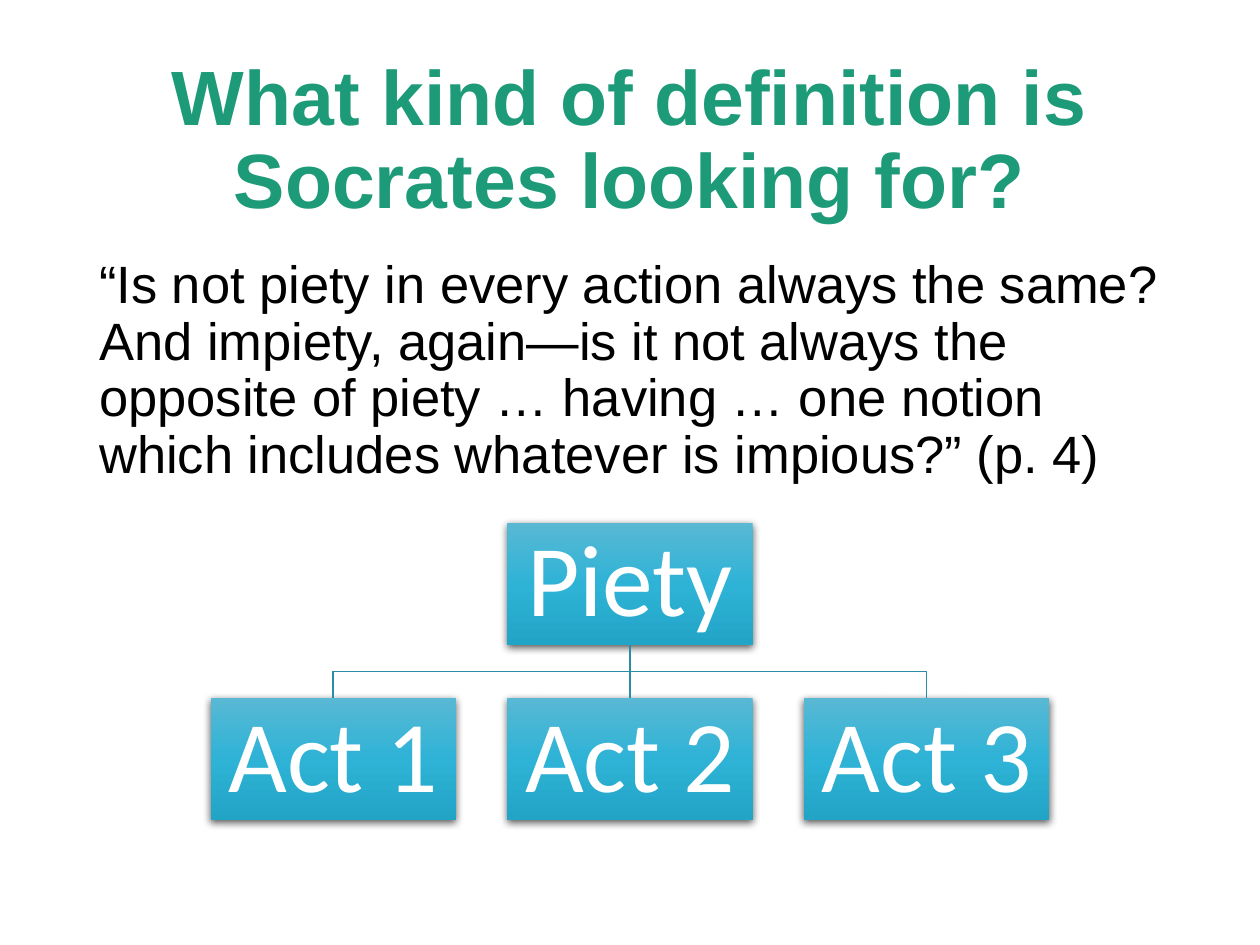
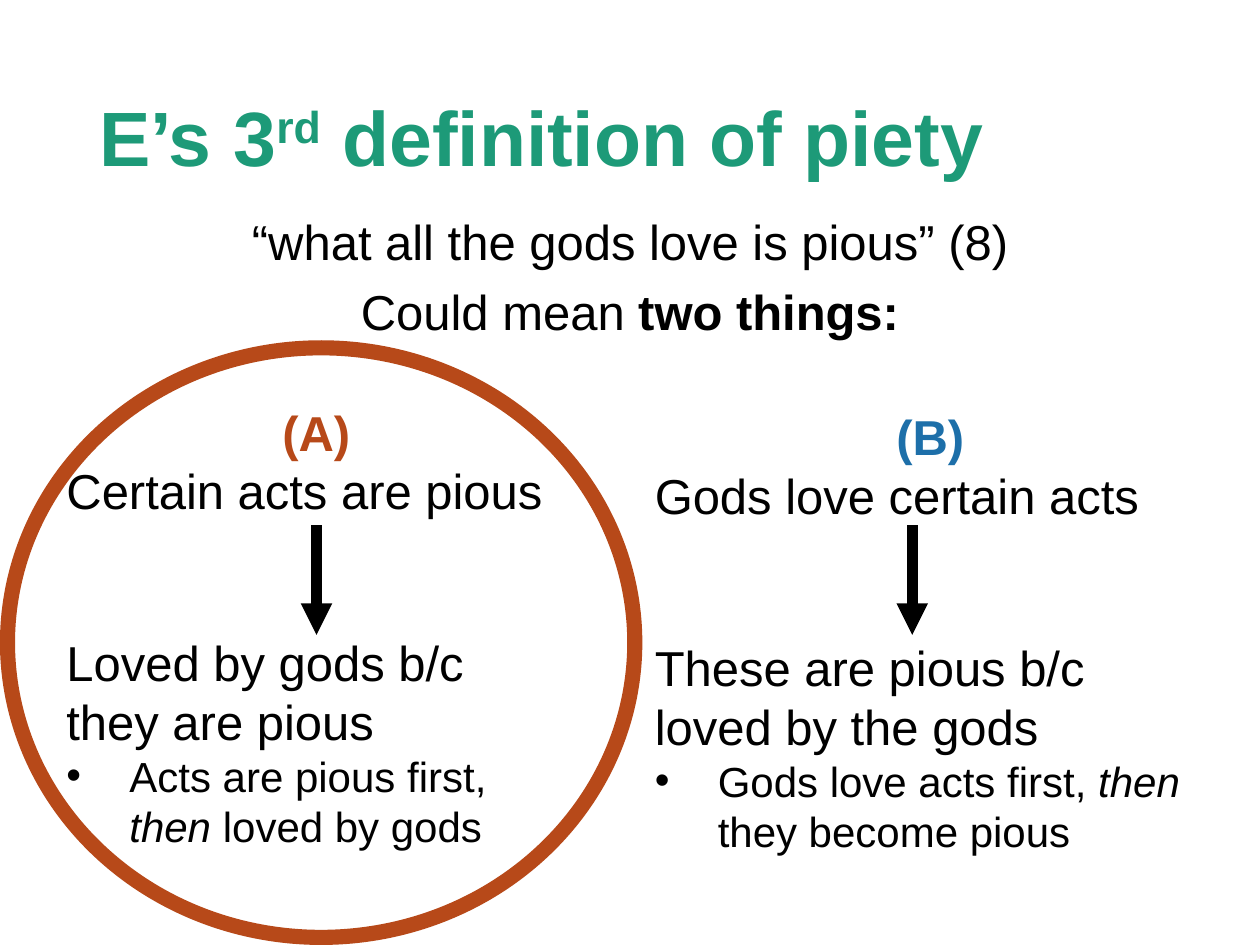
from lxml import etree
from pptx import Presentation
from pptx.dml.color import RGBColor
from pptx.enum.shapes import MSO_CONNECTOR, MSO_SHAPE
from pptx.enum.text import MSO_ANCHOR, PP_ALIGN
from pptx.oxml.ns import qn
from pptx.util import Cm, Pt

LEFT, CENTER = PP_ALIGN.LEFT, PP_ALIGN.CENTER
TOP, MIDDLE = MSO_ANCHOR.TOP, MSO_ANCHOR.MIDDLE
STRAIGHT = MSO_CONNECTOR.STRAIGHT
RECTANGLE, DONUT = MSO_SHAPE.RECTANGLE, MSO_SHAPE.DONUT

COLORS = {
    "title": "1D9A78",
    "text": "000000",
    "white": "FFFFFF",
    "option_a": "B74919",
    "option_b": "1D6FA9",
    "tree_line": "2B8CA5",
    "box_top": "59B8D4",
    "box_middle": "2EB3D6",
    "box_bottom": "21A4C6",
}
RGB = {name: RGBColor.from_string(value) for name, value in COLORS.items()}
MARGIN, CONTENT_WIDTH = 1.75, 21.9


def add_text(page, area, paragraphs, anchor=TOP, line_spacing=1.0):
    """Add a text box; area is left, top, width, height in cm.

    A paragraph is a dict with spans (text, style), size, and optional color,
    align, before and bullet. Styles: b bold, i italic, s superscript.
    """
    box = page.shapes.add_textbox(*[Cm(length) for length in area])
    frame = box.text_frame
    frame.word_wrap = True
    frame.vertical_anchor = anchor
    for index, item in enumerate(paragraphs):
        para = frame.add_paragraph() if index else frame.paragraphs[0]
        if item.get("bullet"):
            properties = para._p.get_or_add_pPr()
            properties.set("marL", str(Cm(1.27)))
            properties.set("indent", str(-Cm(1.27)))
            etree.SubElement(properties, qn("a:buFont")).set("typeface", "Arial")
            etree.SubElement(properties, qn("a:buChar")).set("char", "•")
        para.alignment = item.get("align", LEFT)
        para.line_spacing = line_spacing
        if "before" in item:
            para.space_before = Pt(item["before"])
        for text, style in item["spans"]:
            if text == "\n":
                para.add_line_break()
                continue
            span = para.add_run()
            span.text = text
            span.font.name = "Arial"
            span.font.size = Pt(item["size"])
            span.font.color.rgb = RGB[item.get("color", "text")]
            span.font.bold = "b" in style
            span.font.italic = "i" in style
            if "s" in style:
                span.font._element.set("baseline", "30000")


def add_line(page, start, end, color, width):
    """Add a straight connector without shadow; points are in cm."""
    line = page.shapes.add_connector(
        STRAIGHT, *[Cm(length) for length in (*start, *end)])
    line.line.color.rgb = RGB[color]
    line.line.width = Pt(width)
    etree.SubElement(line._element.spPr, qn("a:effectLst"))
    return line


deck = Presentation()
deck.slide_width, deck.slide_height = Cm(25.4), Cm(19.05)
blank = deck.slide_layouts[6]

titles = [
    (CENTER, [("What kind of definition is Socrates looking for?", "b")]),
    (LEFT, [("E’s 3", "b"), ("rd", "bs"), (" definition of piety", "b")]),
]
for align, spans in titles:
    page = deck.slides.add_slide(blank)
    add_text(page, (MARGIN, 1.02, CONTENT_WIDTH, 3.68),
             [{"spans": spans, "size": 44, "color": "title", "align": align}],
             MIDDLE, 0.9)
definition_page, meanings_page = deck.slides

# Slide 1: quotation and the tree of pious acts
quotation = (
    "“Is not piety in every action always the same? And impiety, again—is it "
    "not always the opposite of piety … having … one notion which includes "
    "whatever is impious?” (p. 4)"
)
add_text(definition_page, (MARGIN, 5.08, CONTENT_WIDTH, 6.78),
         [{"spans": [(quotation, "")], "size": 30}], line_spacing=0.9)

BOX_WIDTH, BOX_HEIGHT, COLUMN_STEP = 4.95, 2.47, 5.98
PIETY_TOP, ACTS_TOP, TREE_CENTER = 10.54, 14.07, 12.7
PIETY_BOTTOM = PIETY_TOP + BOX_HEIGHT
BRANCH_Y = (PIETY_BOTTOM + ACTS_TOP) / 2

tree = {}
for label, column, top in [("Piety", 0, PIETY_TOP), ("Act 1", -1, ACTS_TOP),
                           ("Act 2", 0, ACTS_TOP), ("Act 3", 1, ACTS_TOP)]:
    left = TREE_CENTER + column * COLUMN_STEP - BOX_WIDTH / 2
    box = definition_page.shapes.add_shape(
        RECTANGLE, Cm(left), Cm(top), Cm(BOX_WIDTH), Cm(BOX_HEIGHT))
    tree[label] = box
    box.line.fill.background()

    box.fill.gradient()
    box.fill.gradient_angle = 270
    first, last = box.fill.gradient_stops
    first.color.rgb, last.color.rgb = RGB["box_top"], RGB["box_bottom"]
    properties = box._element.spPr
    middle = etree.Element(qn("a:gs"), pos="50000")
    etree.SubElement(middle, qn("a:srgbClr")).set("val", COLORS["box_middle"])
    properties.find(".//" + qn("a:gsLst")).insert(1, middle)

    box.shadow.inherit = False
    shadow = etree.SubElement(
        properties.find(qn("a:effectLst")), qn("a:outerShdw"),
        blurRad=str(Pt(4.5)), dist=str(Pt(1.5)), dir="5400000", rotWithShape="0")
    shade = etree.SubElement(shadow, qn("a:srgbClr"), val=COLORS["text"])
    etree.SubElement(shade, qn("a:alpha"), val="63000")

    frame = box.text_frame
    frame.margin_left = frame.margin_right = Cm(0.1)
    frame.margin_top = frame.margin_bottom = Cm(0.1)
    frame.vertical_anchor = MIDDLE
    frame.text = label
    para = frame.paragraphs[0]
    para.alignment = CENTER
    para.line_spacing = 0.9
    span = para.runs[0]
    span.font.name = "Calibri"
    span.font.size = Pt(58)
    span.font.color.rgb = RGB["white"]

trunk = add_line(definition_page, (TREE_CENTER, PIETY_BOTTOM),
                 (TREE_CENTER, ACTS_TOP), "tree_line", 1)
trunk.begin_connect(tree["Piety"], 2)
trunk.end_connect(tree["Act 2"], 0)

for side in (-1, 1):
    act_x = TREE_CENTER + side * COLUMN_STEP
    outline = definition_page.shapes.build_freeform(
        Cm(TREE_CENTER), Cm(PIETY_BOTTOM))
    outline.add_line_segments(
        [(Cm(TREE_CENTER), Cm(BRANCH_Y)), (Cm(act_x), Cm(BRANCH_Y)),
         (Cm(act_x), Cm(ACTS_TOP))], close=False)
    branch = outline.convert_to_shape()
    branch.fill.background()
    branch.line.color.rgb = RGB["tree_line"]
    branch.line.width = Pt(1)
    branch.shadow.inherit = False

# Slide 2: two readings of the third definition
add_text(meanings_page, (MARGIN, 4.27, CONTENT_WIDTH, 2.97), [
    {"spans": [("“what all the gods love is pious” (8)", "")],
     "size": 28, "align": CENTER},
    {"spans": [("Could mean ", ""), ("two things:", "b")],
     "size": 28, "align": CENTER, "before": 10},
], line_spacing=0.9)

ARROW_GAP = 64.4
readings = [
    ((1.09, 7.98, 10.57, 9.83), "(A)", "option_a", 6.38,
     ["Certain acts are pious", "Loved by gods b/c", "they are pious"],
     [("Acts are pious first,", ""), ("\n", ""), ("then", "i"),
      (" loved by gods", "")]),
    ((12.95, 8.08, 11.61, 9.5), "(B)", "option_b", 18.39,
     ["Gods love certain acts", "These are pious b/c", "loved by the gods"],
     [("Gods love acts first, ", ""), ("then", "i"),
      (" they become pious", "")]),
]
for area, letter, color, arrow_x, statements, order in readings:
    premise, result, reason = [
        {"spans": [(statement, "")], "size": 28} for statement in statements]
    result["before"] = ARROW_GAP
    add_text(meanings_page, area, [
        {"spans": [(letter, "b")], "size": 28, "color": color, "align": CENTER},
        premise, result, reason,
        {"spans": order, "size": 24, "bullet": True},
    ])
    arrow = add_line(meanings_page, (arrow_x, 10.59), (arrow_x, 12.8), "text", 6)
    etree.SubElement(arrow.line._get_or_add_ln(), qn("a:tailEnd"), type="triangle")

ring = meanings_page.shapes.add_shape(DONUT, 0, Cm(6.86), Cm(12.95), Cm(12.19))
ring.adjustments[0] = 0.025
ring.fill.solid()
ring.fill.fore_color.rgb = RGB["option_a"]
ring.line.fill.background()
ring.shadow.inherit = False

deck.save("out.pptx")
